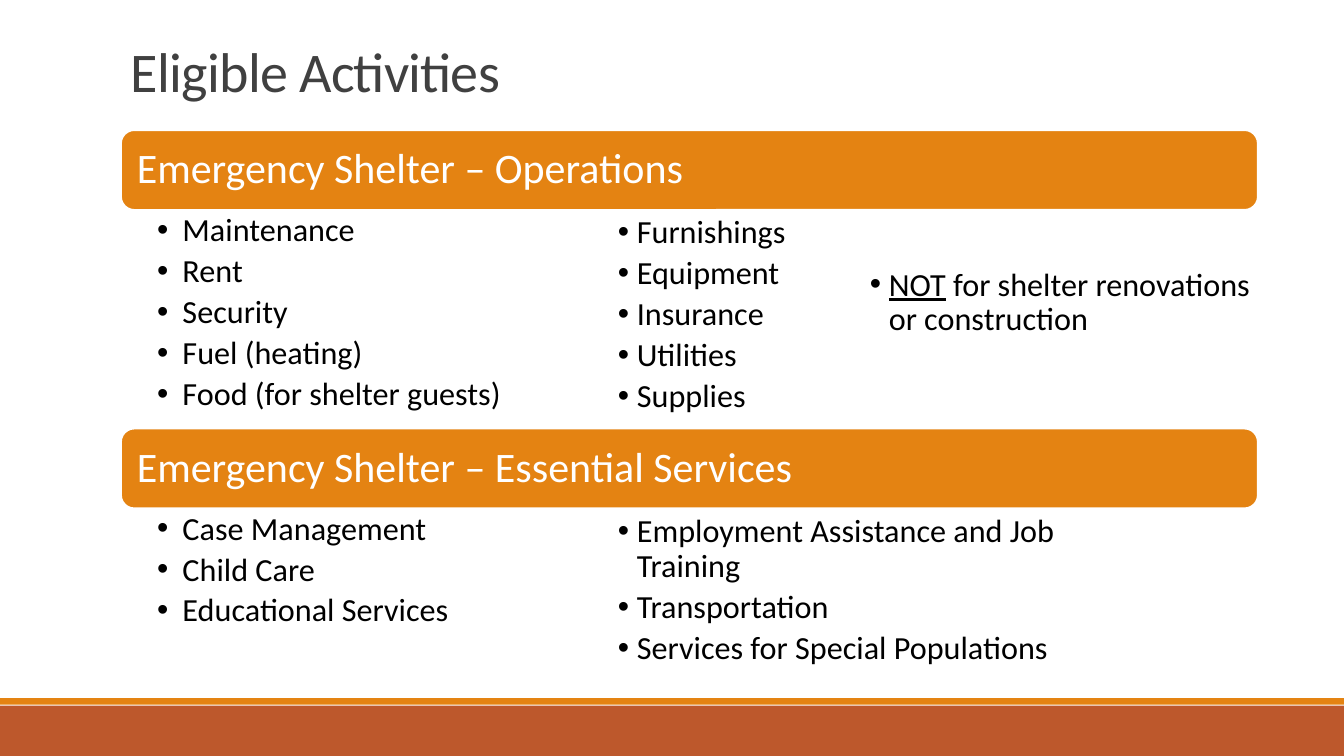
from dataclasses import dataclass

from lxml.etree import SubElement
from pptx import Presentation
from pptx.dml.color import RGBColor
from pptx.enum.shapes import MSO_SHAPE as Preset
from pptx.enum.text import MSO_ANCHOR as Anchor, MSO_AUTO_SIZE as AutoSize, PP_ALIGN as Align
from pptx.oxml.ns import qn
from pptx.util import Cm, Pt


@dataclass(frozen=True)
class Theme:
    font: str = "Calibri"
    orange: str = "E48312"
    rust: str = "BD582C"
    white: str = "FFFFFF"
    black: str = "000000"
    grey: str = "404040"
    title_size: float = 40
    band_size: float = 30
    list_size: float = 23


THEME = Theme()


@dataclass(frozen=True)
class Frame:
    left: float
    top: float
    width: float
    height: float

    def lengths(self) -> tuple:
        return Cm(self.left), Cm(self.top), Cm(self.width), Cm(self.height)


@dataclass(frozen=True)
class Band:
    text: str
    top: float


@dataclass(frozen=True)
class BulletList:
    frame: Frame
    items: tuple
    hang: float = 0.48
    insets: tuple = (0.25, 0.13, 0.25, 0.13)
    underlined: str = ""  # opening word to underline in the first item


BAND_LEFT, BAND_WIDTH, BAND_HEIGHT = 3.05, 28.65, 2.01
COLUMN_LEFT = 15.32
OPERATIONS = Band("Emergency Shelter – Operations", 3.28)
SERVICES = Band("Emergency Shelter – Essential Services", 10.8)


def list_below(band: Band, height: float, items: tuple) -> BulletList:
    frame = Frame(BAND_LEFT, band.top + BAND_HEIGHT, BAND_WIDTH, height)
    return BulletList(frame, items, hang=0.64, insets=(0.91, 0.1, 0.58, 0.1))


LISTS = (
    list_below(OPERATIONS, 5.51, (
        "Maintenance", "Rent", "Security", "Fuel (heating)", "Food (for shelter guests)")),
    list_below(SERVICES, 3.35, (
        "Case Management", "Child Care", "Educational Services")),
    BulletList(Frame(COLUMN_LEFT, 5.31, 7.09, 6.43), (
        "Furnishings", "Equipment", "Insurance", "Utilities", "Supplies")),
    BulletList(Frame(COLUMN_LEFT, 12.85, 12.22, 5.16), (
        "Employment Assistance and Job Training", "Transportation",
        "Services for Special Populations")),
    BulletList(Frame(21.67, 6.63, 10.49, 3), (
        " for shelter renovations or construction",), underlined="NOT"),
)


def set_values(target, values: dict) -> None:
    for name, value in values.items():
        setattr(target, name, value)


def format_box(text_frame, insets: tuple, anchor) -> None:
    left, top, right, bottom = map(Cm, insets)
    set_values(text_frame, {
        "word_wrap": True, "auto_size": AutoSize.NONE, "vertical_anchor": anchor,
        "margin_left": left, "margin_top": top,
        "margin_right": right, "margin_bottom": bottom})


def add_span(para, text: str, size: float, color: str, underline: bool = False):
    span = para.add_run()
    span.text = text
    set_values(span.font, {"name": THEME.font, "size": Pt(size), "underline": underline})
    span.font.color.rgb = RGBColor.from_string(color)
    return span


def add_block(page, preset, frame: Frame, color: str):
    block = page.shapes.add_shape(preset, *frame.lengths())
    block.shadow.inherit = False
    block.fill.solid()
    block.fill.fore_color.rgb = RGBColor.from_string(color)
    block.line.fill.background()
    return block


def add_title(page, text: str) -> None:
    title = page.shapes.title
    names = ("left", "top", "width", "height")
    set_values(title, dict(zip(names, Frame(3.05, 0.79, 27.94, 1.96).lengths())))
    format_box(title.text_frame, (0.25, 0.13, 0.25, 0.13), Anchor.BOTTOM)
    para = title.text_frame.paragraphs[0]
    set_values(para, {"alignment": Align.LEFT, "line_spacing": 0.85})
    span = add_span(para, text, THEME.title_size, THEME.grey)
    span.font._element.set("spc", "-50")


def add_band(page, band: Band) -> None:
    frame = Frame(BAND_LEFT, band.top, BAND_WIDTH, BAND_HEIGHT)
    box = add_block(page, Preset.ROUNDED_RECTANGLE, frame, THEME.orange)
    box.line.color.rgb = RGBColor.from_string(THEME.white)
    box.line.width = Pt(1.25)
    format_box(box.text_frame, (0.3, 0.3, 0.3, 0.3), Anchor.MIDDLE)
    para = box.text_frame.paragraphs[0]
    set_values(para, {"alignment": Align.LEFT, "line_spacing": 0.9})
    add_span(para, band.text, THEME.band_size, THEME.white)


def add_bullet(para, hang: float) -> None:
    properties = para._p.get_or_add_pPr()
    properties.set("marL", str(Cm(hang)))
    properties.set("indent", str(-Cm(hang)))
    SubElement(properties, qn("a:buFont"), typeface="Arial")
    SubElement(properties, qn("a:buChar"), char="•")


def add_list(page, bullets: BulletList) -> None:
    box = page.shapes.add_textbox(*bullets.frame.lengths())
    format_box(box.text_frame, bullets.insets, Anchor.TOP)
    for index, item in enumerate(bullets.items):
        para = box.text_frame.add_paragraph() if index else box.text_frame.paragraphs[0]
        set_values(para, {"level": 1, "line_spacing": 0.9, "space_after": Pt(4.4)})
        add_bullet(para, bullets.hang)
        if bullets.underlined and index == 0:
            add_span(para, bullets.underlined, THEME.list_size, THEME.black, underline=True)
        add_span(para, item, THEME.list_size, THEME.black)


def main() -> None:
    deck = Presentation()
    set_values(deck, {"slide_width": Cm(33.87), "slide_height": Cm(19.05)})
    page = deck.slides.add_slide(deck.slide_layouts.get_by_name("Title Only"))

    # Footer stripes
    add_block(page, Preset.RECTANGLE, Frame(0, 17.78, 33.87, 1.27), THEME.rust)
    add_block(page, Preset.RECTANGLE, Frame(0, 17.59, 33.87, 0.17), THEME.orange)

    # Title, section bands and their lists
    add_title(page, "Eligible Activities")
    for band in (OPERATIONS, SERVICES):
        add_band(page, band)
    for bullets in LISTS:
        add_list(page, bullets)

    deck.save("out.pptx")


if __name__ == "__main__":
    main()
